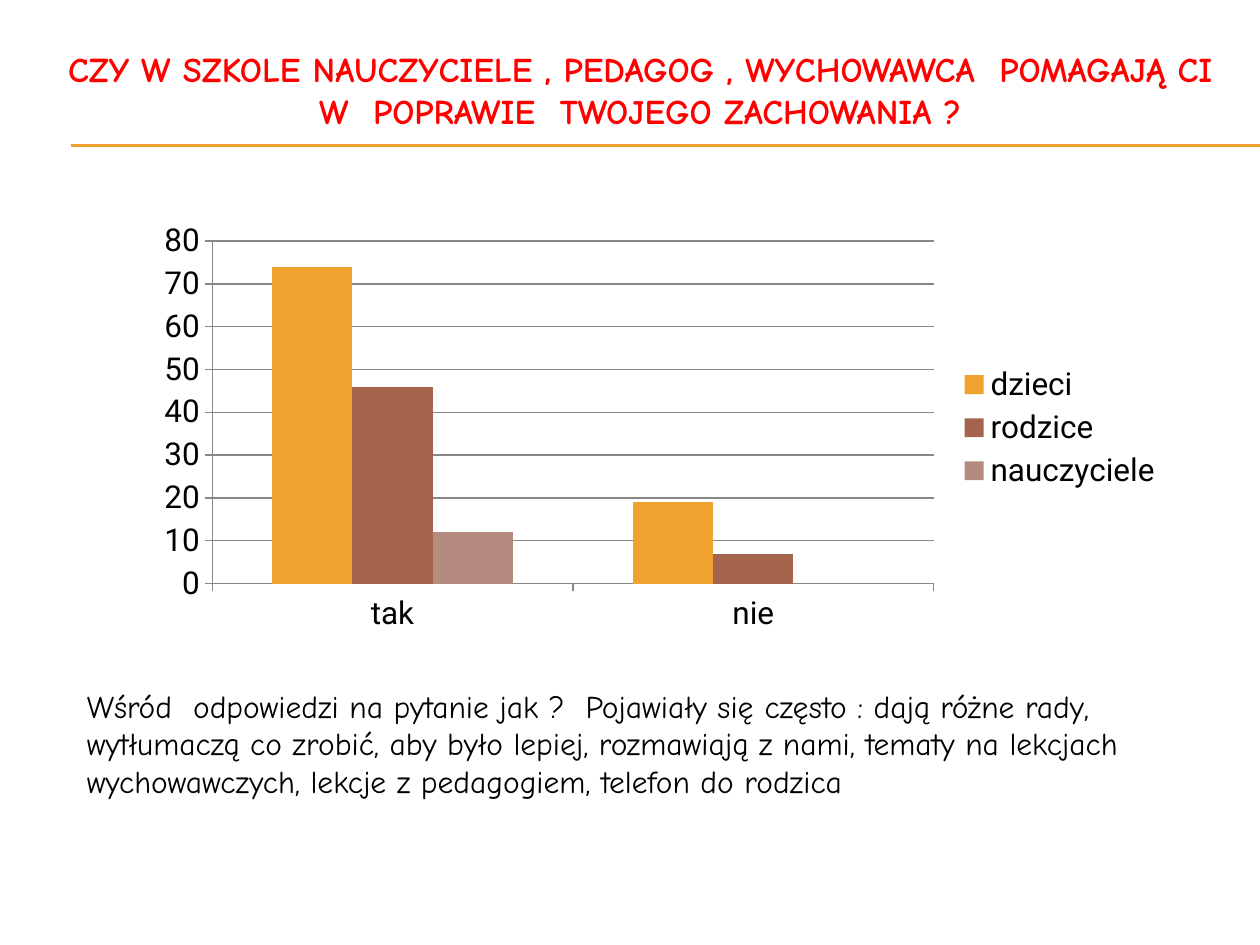
"""Build a survey slide with a title, a clustered column chart and a comment."""
from lxml import etree
from pptx import Presentation
from pptx import util as u
from pptx.chart.data import CategoryChartData
from pptx.dml.color import RGBColor
from pptx.enum import chart as charts, shapes, text
from pptx.oxml.ns import qn

COLORS = {
    "title": "FF0000",
    "text": "000000",
    "rule": "F0A22E",
    "grid": "878787",
    "dzieci": "F0A22E",
    "rodzice": "A5644E",
    "nauczyciele": "B58B80",
}
ANSWERS = ["tak", "nie"]
VOTES = {"dzieci": (74, 19), "rodzice": (46, 7), "nauczyciele": (12, 0)}
TITLE = ("CZY W SZKOLE NAUCZYCIELE , PEDAGOG , WYCHOWAWCA  POMAGAJĄ CI "
         "W  POPRAWIE  TWOJEGO ZACHOWANIA ?")
COMMENT = ("Wśród  odpowiedzi na pytanie jak ?  Pojawiały się często : dają różne rady, "
           "wytłumaczą co zrobić, aby było lepiej, rozmawiają z nami, tematy na lekcjach "
           "wychowawczych, lekcje z pedagogiem, telefon do rodzica")


def color(name):
    return RGBColor.from_string(COLORS[name])


def add_rule(slide, top):
    line = slide.shapes.add_connector(
        shapes.MSO_CONNECTOR.STRAIGHT,
        u.Inches(0.56), u.Inches(top), u.Inches(10), u.Inches(top))
    line.line.color.rgb = color("rule")
    line.line.width = u.Pt(0.75)
    etree.SubElement(line._element.spPr, qn("a:effectLst"))


def add_text(slide, content, box, *, size, fill, bold=False,
             align=text.PP_ALIGN.LEFT, anchor=text.MSO_ANCHOR.TOP):
    shape = slide.shapes.add_textbox(*map(u.Inches, box))
    frame = shape.text_frame
    frame.word_wrap = True
    frame.vertical_anchor = anchor
    paragraph = frame.paragraphs[0]
    paragraph.alignment = align
    run = paragraph.add_run()
    run.text = content
    run.font.name = "Comic Neue"
    run.font.size = u.Pt(size)
    run.font.bold = bold
    run.font.color.rgb = color(fill)


def style_line(line):
    line.color.rgb = color("grid")
    line.width = u.Pt(0.75)


def add_votes_chart(slide, box):
    data = CategoryChartData()
    data.categories = ANSWERS
    for group, votes in VOTES.items():
        data.add_series(group, votes)
    chart = slide.shapes.add_chart(
        charts.XL_CHART_TYPE.COLUMN_CLUSTERED, *map(u.Inches, box), data).chart
    chart.has_title = False
    chart.font.name = "Roboto"
    chart.font.size = u.Pt(18)
    chart.font.color.rgb = color("text")
    chart.has_legend = True
    chart.legend.position = charts.XL_LEGEND_POSITION.RIGHT
    chart.legend.include_in_layout = False
    for axis in (chart.category_axis, chart.value_axis):
        axis.major_tick_mark = charts.XL_TICK_MARK.OUTSIDE
        style_line(axis.format.line)
    chart.value_axis.minimum_scale = 0
    chart.value_axis.maximum_scale = 80
    chart.value_axis.major_unit = 10
    style_line(chart.value_axis.major_gridlines.format.line)
    plot = chart.plots[0]
    plot.vary_by_categories = False
    plot.gap_width = 150
    plot.overlap = 0
    for series in plot.series:
        series.format.fill.solid()
        series.format.fill.fore_color.rgb = color(series.name)


def main():
    presentation = Presentation()
    presentation.slide_width = u.Inches(10)
    presentation.slide_height = u.Inches(7.5)
    slide = presentation.slides.add_slide(presentation.slide_layouts[6])
    for top in (1.15, 1.16):
        add_rule(slide, top)
    add_text(slide, TITLE, (0.33, 0.25, 9.5, 0.92), size=19.8, fill="title", bold=True,
             align=text.PP_ALIGN.CENTER, anchor=text.MSO_ANCHOR.MIDDLE)
    add_votes_chart(slide, (1.14, 1.7, 8.19, 3.39))
    add_text(slide, COMMENT, (0.59, 5.4, 8.82, 1.01), size=18, fill="text")
    presentation.save("out.pptx")


if __name__ == "__main__":
    main()
